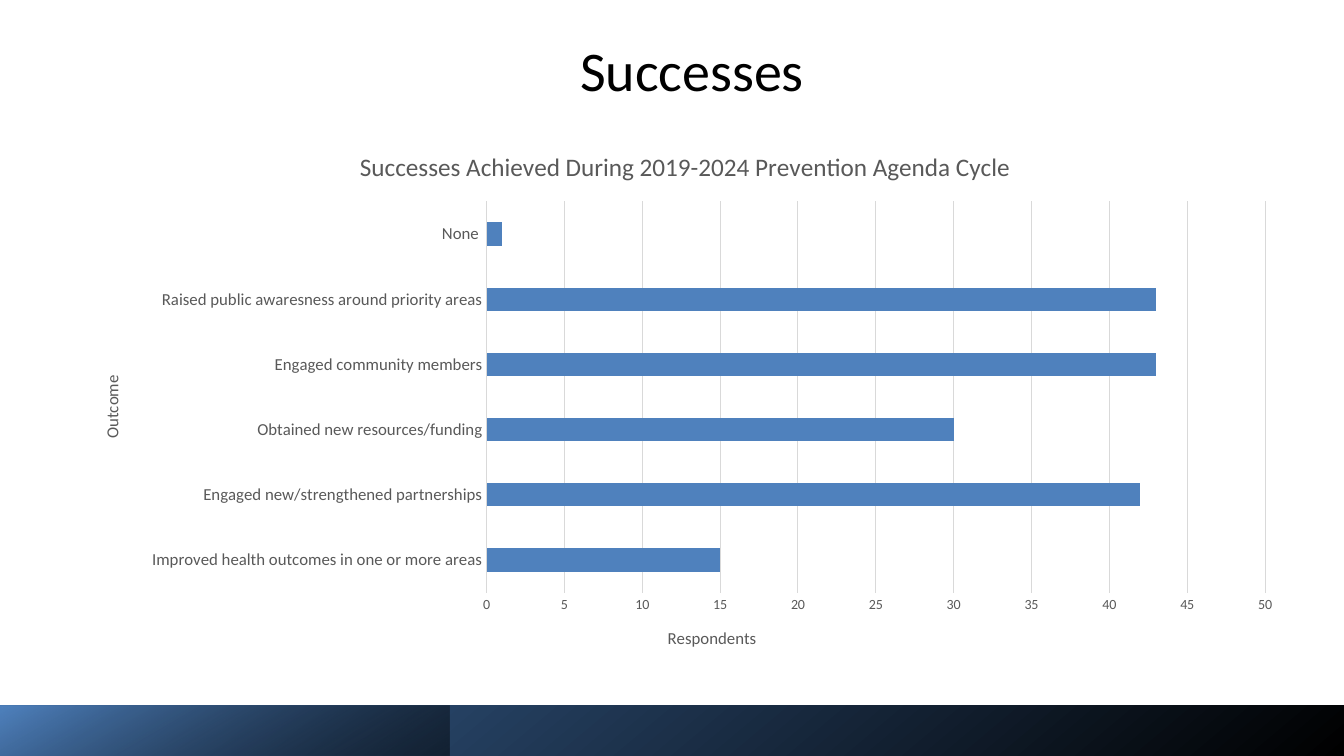
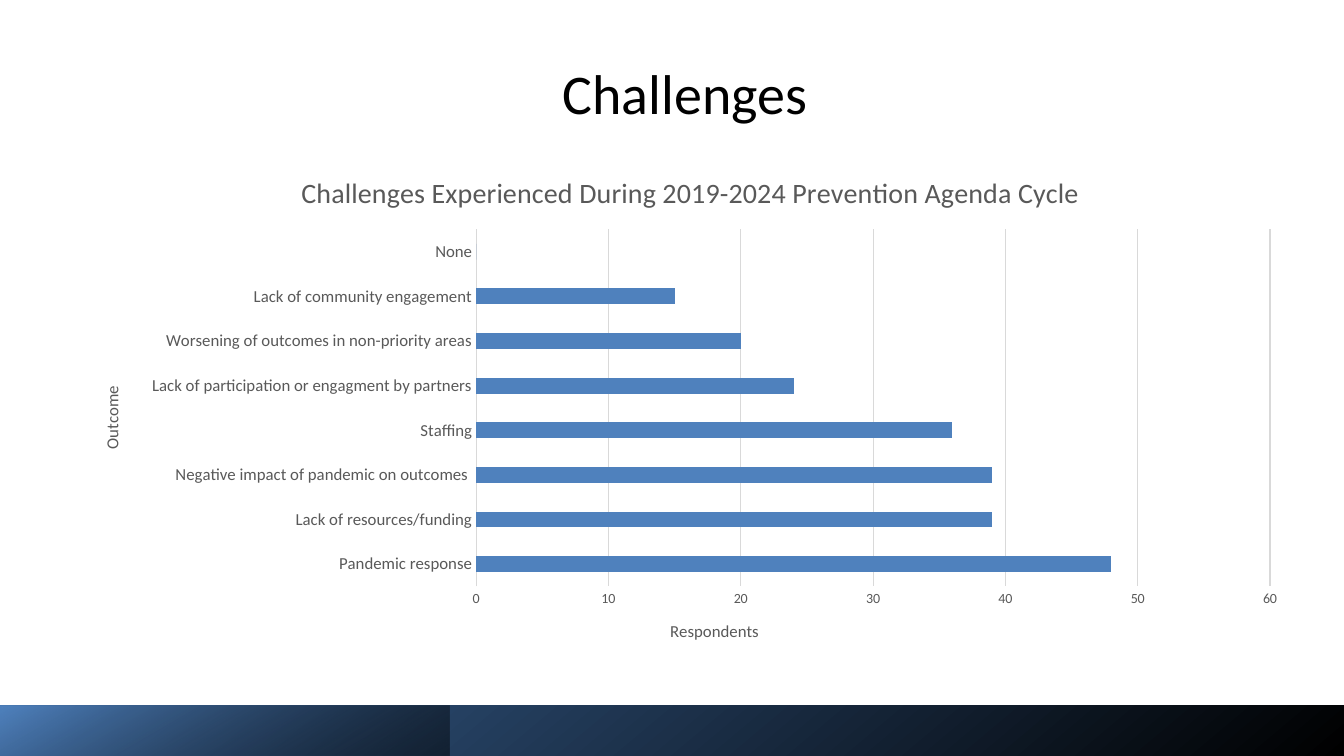
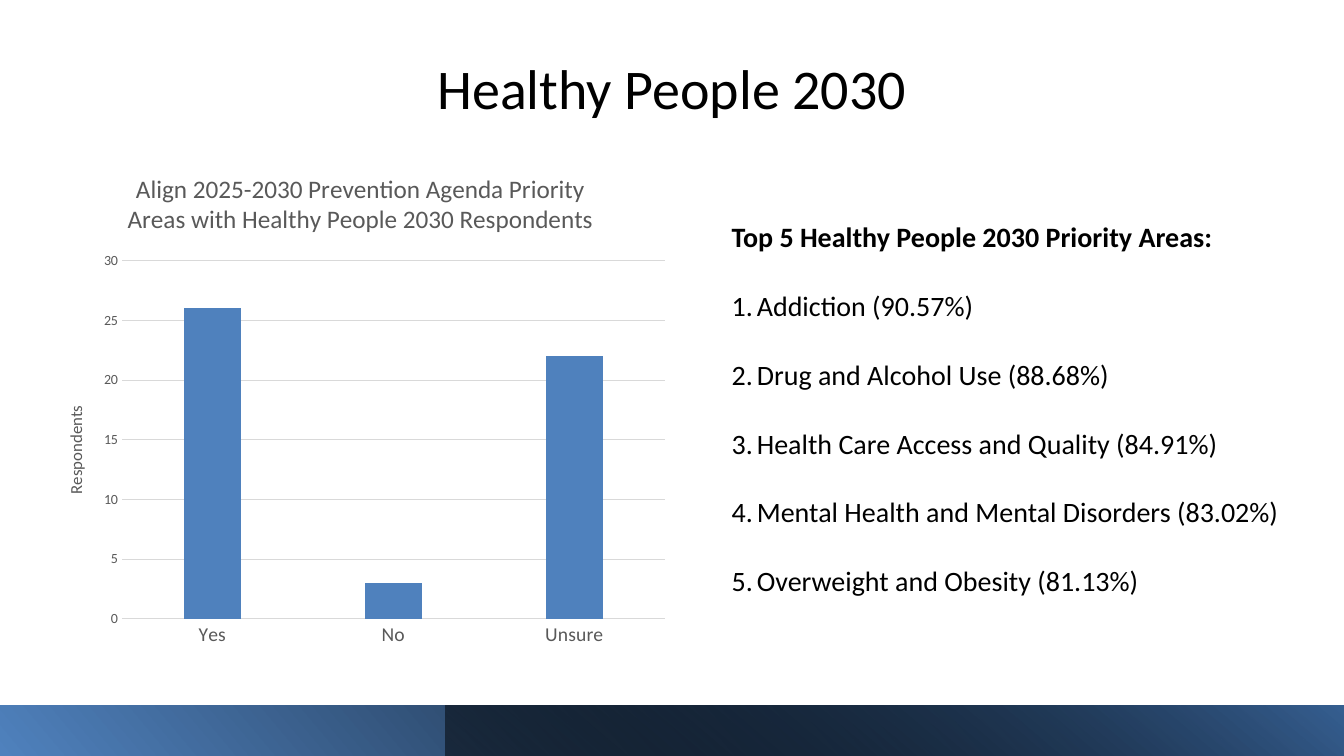
"""Builds three survey result slides with charts and gradient footer bands."""
from dataclasses import dataclass
from typing import Optional

from lxml import etree
from pptx import Presentation
from pptx import util as u
from pptx.chart import data as cd
from pptx.dml.color import RGBColor
from pptx.enum import chart as ch, shapes, text
from pptx.oxml import ns


@dataclass(frozen=True)
class Theme:
    font: str = "Calibri"
    black: str = "000000"
    gray: str = "595959"
    rule: str = "D9D9D9"
    blue: str = "4F81BD"
    navy: str = "376092"
    title: float = 40
    body: float = 20
    label: float = 12
    tick: float = 10
    hairline: float = 0.75


@dataclass(frozen=True)
class Box:
    left: float
    top: float
    width: float
    height: float

    def pts(self) -> list:
        return [u.Pt(v) for v in (self.left, self.top, self.width, self.height)]


@dataclass(frozen=True)
class Stop:
    position: float
    color: str
    opacity: Optional[int] = None


@dataclass(frozen=True)
class Band:
    left: float
    width: float
    angle: float
    stops: tuple[Stop, Stop]
    flip: bool = False
    rotation: float = 0


@dataclass(frozen=True)
class ChartSpec:
    box: Box
    title: str
    title_size: float
    values: dict[str, float]
    top_value: float
    unit: float
    value_title: str = "Respondents"
    category_title: Optional[str] = None
    category_size: float = 12
    horizontal: bool = True
    gap: int = 182
    overlap: int = 0


@dataclass(frozen=True)
class SlideSpec:
    title: str
    title_box: Box
    anchor: text.MSO_ANCHOR
    bands: tuple[Band, ...]
    chart: ChartSpec
    heading: str = ""
    items: tuple[str, ...] = ()


T = Theme()
WIDTH, HEIGHT, BAND_HEIGHT = 960, 540, 36

WIDE_BANDS = (
    Band(0, WIDTH, 230, (Stop(0, T.black), Stop(1, T.navy))),
    Band(0, 321, 240, (Stop(0, T.black, 46), Stop(0.99, T.blue))),
)
MIRRORED_BANDS = (
    Band(0, WIDTH, 40, (Stop(0, T.blue), Stop(0.9, T.black)), flip=True, rotation=180),
    Band(318, 642, 230, (Stop(0, T.black, 50), Stop(1, T.navy)), flip=True),
)

SLIDES = (
    SlideSpec(
        "Successes", Box(93.6, 6, 801.4, 86.4), text.MSO_ANCHOR.MIDDLE, WIDE_BANDS,
        ChartSpec(
            Box(57, 92, 869, 386.6),
            "Successes Achieved During 2019-2024 Prevention Agenda Cycle ", 18,
            {
                "Improved health outcomes in one or more areas": 15,
                "Engaged new/strengthened partnerships": 42,
                "Obtained new resources/funding": 30,
                "Engaged community members": 43,
                "Raised public awaresness around priority areas": 43,
                "None ": 1,
            },
            50, 5, category_title="Outcome",
        ),
    ),
    SlideSpec(
        "Challenges", Box(88.6, 22.3, 801.4, 86.4), text.MSO_ANCHOR.MIDDLE, WIDE_BANDS,
        ChartSpec(
            Box(57, 108.7, 872.6, 365),
            "Challenges Experienced During 2019-2024 Prevention Agenda Cycle", 20,
            {
                "Pandemic response": 48,
                "Lack of resources/funding": 39,
                "Negative impact of pandemic on outcomes ": 39,
                "Staffing": 36,
                "Lack of participation or engagment by partners": 24,
                "Worsening of outcomes in non-priority areas": 20,
                "Lack of community engagement": 15,
                "None": 0,
            },
            60, 10, category_title="Outcome",
        ),
    ),
    SlideSpec(
        "Healthy People 2030", Box(253.4, 18.7, 452.9, 71.3), text.MSO_ANCHOR.BOTTOM,
        MIRRORED_BANDS,
        ChartSpec(
            Box(31, 108, 452.9, 361.4),
            "Align 2025-2030 Prevention Agenda Priority Areas with Healthy People 2030 Respondents",
            18, {"Yes": 26, "No": 3, "Unsure": 22}, 30, 5,
            category_size=14, horizontal=False, gap=219, overlap=-27,
        ),
        "Top 5 Healthy People 2030 Priority Areas:",
        (
            "Addiction (90.57%)",
            "Drug and Alcohol Use (88.68%)",
            "Health Care Access and Quality (84.91%)",
            "Mental Health and Mental Disorders (83.02%)",
            "Overweight and Obesity (81.13%)",
        ),
    ),
)


def style(font, size: float, color: str, bold: bool = False) -> None:
    font.name = T.font
    font.size = u.Pt(size)
    font.bold = bold
    font.color.rgb = RGBColor.from_string(color)


def rule(line) -> None:
    line.color.rgb = RGBColor.from_string(T.rule)
    line.width = u.Pt(T.hairline)


def add_title(slide, spec: SlideSpec) -> None:
    sp = slide.shapes.title
    sp.left, sp.top, sp.width, sp.height = spec.title_box.pts()
    tf = sp.text_frame
    tf.text = spec.title
    tf.vertical_anchor = spec.anchor
    tf.auto_size = text.MSO_AUTO_SIZE.NONE
    p = tf.paragraphs[0]
    p.alignment = text.PP_ALIGN.CENTER
    style(p.runs[0].font, T.title, T.black)


def add_band(slide, band: Band) -> None:
    box = Box(band.left, HEIGHT - BAND_HEIGHT, band.width, BAND_HEIGHT)
    sp = slide.shapes.add_shape(shapes.MSO_SHAPE.RECTANGLE, *box.pts())
    sp.shadow.inherit = False
    sp.line.fill.background()
    sp.rotation = band.rotation
    if band.flip:
        sp.element.spPr.get_or_add_xfrm().set("flipH", "1")
    sp.fill.gradient()
    sp.fill.gradient_angle = 360 - band.angle
    for gs, stop in zip(sp.fill.gradient_stops, band.stops):
        gs.position = stop.position
        gs.color.rgb = RGBColor.from_string(stop.color)
    colors = sp.element.spPr.findall(".//" + ns.qn("a:srgbClr"))
    for color, stop in zip(colors, band.stops):
        if stop.opacity is not None:
            etree.SubElement(color, ns.qn("a:alpha"), val=str(stop.opacity * 1000))


def title_axis(axis, label: str, vertical: bool) -> None:
    title = axis.axis_title
    title.text_frame.text = label
    style(title.text_frame.paragraphs[0].runs[0].font, T.label, T.gray)
    body = title.element.find(".//" + ns.qn("a:bodyPr"))
    body.set("rot", "-5400000" if vertical else "0")
    body.set("vert", "horz")


def add_chart(slide, spec: ChartSpec) -> None:
    data = cd.CategoryChartData()
    data.categories = list(spec.values)
    data.add_series("Series 1", list(spec.values.values()))
    types = ch.XL_CHART_TYPE
    kind = types.BAR_CLUSTERED if spec.horizontal else types.COLUMN_CLUSTERED
    chart = slide.shapes.add_chart(kind, *spec.box.pts(), data).chart
    style(chart.font, T.tick, T.black)
    chart.has_legend = False
    tf = chart.chart_title.text_frame
    tf.text = spec.title
    style(tf.paragraphs[0].runs[0].font, spec.title_size, T.gray)
    chart.chart_title.include_in_layout = False

    plot = chart.plots[0]
    plot.vary_by_categories = False
    plot.gap_width = spec.gap
    plot.overlap = spec.overlap
    fill = plot.series[0].format.fill
    fill.solid()
    fill.fore_color.rgb = RGBColor.from_string(T.blue)

    cat, val = chart.category_axis, chart.value_axis
    for axis, size in ((cat, spec.category_size), (val, T.tick)):
        axis.major_tick_mark = axis.minor_tick_mark = ch.XL_TICK_MARK.NONE
        style(axis.tick_labels.font, size, T.gray)
    cat.has_major_gridlines = False
    rule(cat.format.line)
    val.minimum_scale, val.maximum_scale, val.major_unit = 0, spec.top_value, spec.unit
    val.format.line.fill.background()
    rule(val.major_gridlines.format.line)
    if spec.category_title:
        title_axis(cat, spec.category_title, spec.horizontal)
    title_axis(val, spec.value_title, not spec.horizontal)


def add_ranking(slide, heading: str, items: tuple[str, ...]) -> None:
    tf = slide.shapes.add_textbox(*Box(515.5, 134, 444.5, 335.5).pts()).text_frame
    tf.word_wrap = True
    tf.text = "\n".join((heading, *items))
    for i, p in enumerate(tf.paragraphs):
        p.line_spacing = 1.8
        p.space_after = u.Pt(6)
        style(p.runs[0].font, T.body, T.black, bold=i == 0)
        if i:
            ppr = p.runs[0].font and p._p.get_or_add_pPr()
            ppr.set("marL", str(u.Pt(18)))
            ppr.set("indent", str(-u.Pt(18)))
            etree.SubElement(ppr, ns.qn("a:buFont"), typeface=T.font)
            etree.SubElement(ppr, ns.qn("a:buAutoNum"), type="arabicPeriod")


def main() -> None:
    prs = Presentation()
    prs.slide_width, prs.slide_height = u.Pt(WIDTH), u.Pt(HEIGHT)
    for spec in SLIDES:
        slide = prs.slides.add_slide(prs.slide_layouts[5])
        add_title(slide, spec)
        for band in spec.bands:
            add_band(slide, band)
        add_chart(slide, spec.chart)
        if spec.items:
            add_ranking(slide, spec.heading, spec.items)
    prs.save("out.pptx")


if __name__ == "__main__":
    main()
